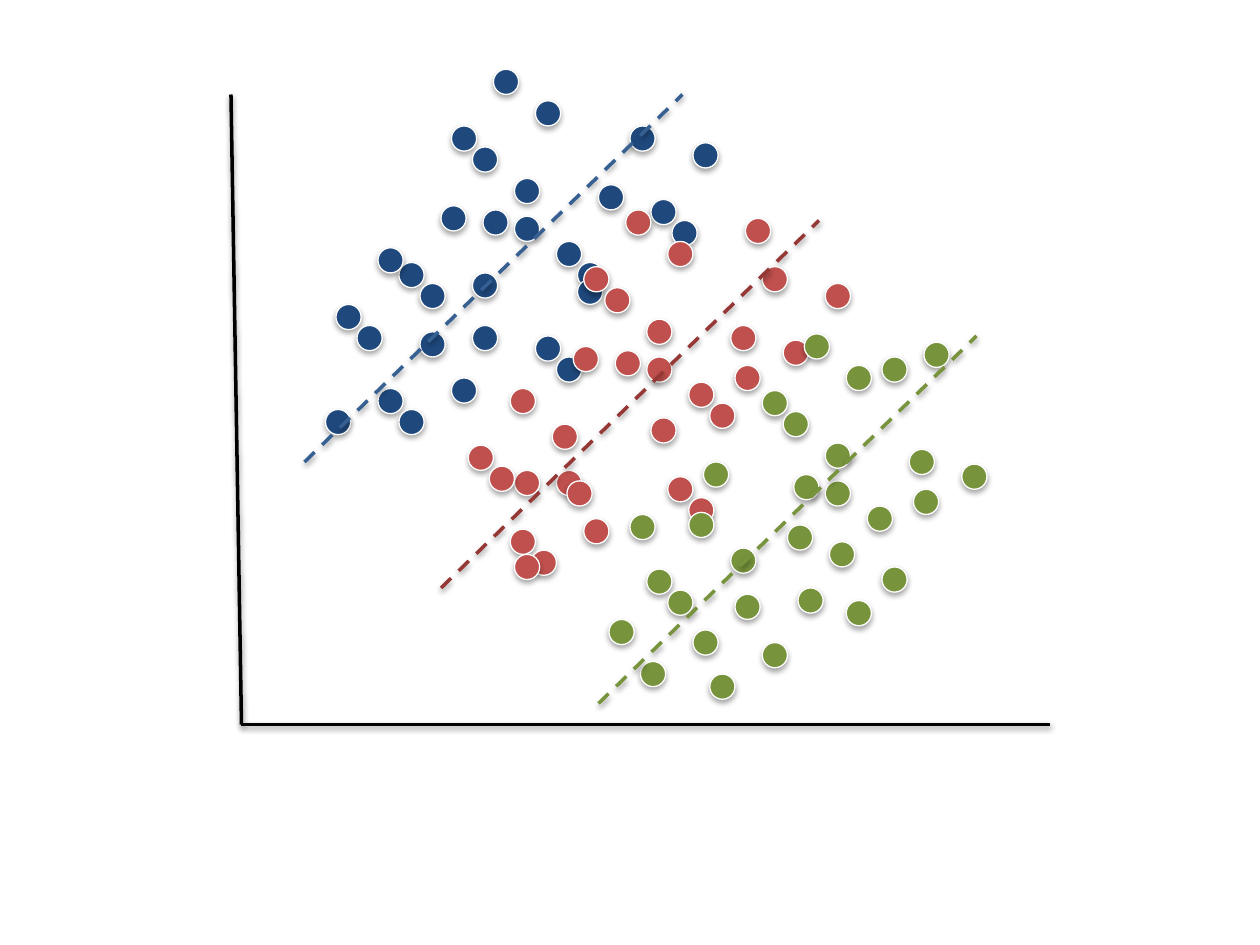
from dataclasses import dataclass

import lxml.etree
import pptx
import pptx.dml.color
import pptx.enum.dml
import pptx.enum.shapes
import pptx.oxml.ns
import pptx.util

COLUMNS, ROWS = 600, 450
SLIDE_WIDTH = pptx.util.Inches(10)
SLIDE_HEIGHT = pptx.util.Inches(7.5)

COLOURS = {
    "axis": "000000",
    "outline": "FFFFFF",
    "shadow": "000000",
    "blue": "1F497D",
    "blue trend": "376092",
    "red": "C0504D",
    "red trend": "953735",
    "green": "77933C",
    "green trend": "77933C",
}

Point = tuple[int, int]

DOT_SIZE = 12
AXIS_TOP, ORIGIN, AXIS_RIGHT = (110, 45), (115, 345), (500, 345)
TREND_RUN, TREND_RISE = 180, 175


@dataclass(frozen=True)
class Shadow:
    """Soft shadow straight below; distances in points, opacity in percent."""
    distance: float
    opacity: int
    blur: float = 3.15


@dataclass(frozen=True)
class Cluster:
    """Dots by top left corner, in drawing order, and the low end of their trend."""
    name: str
    trend_start: Point
    dots: list[Point]


LINE_SHADOW = Shadow(distance=1.57, opacity=38)
DOT_SHADOW = Shadow(distance=1.81, opacity=35)

CLUSTERS = [
    Cluster("blue", (145, 220), [
        (215, 60), (225, 130), (230, 100), (160, 145), (255, 160), (180, 185),
        (265, 115), (215, 180), (190, 125), (310, 95), (225, 70), (225, 155),
        (245, 85), (170, 155), (265, 170), (190, 195), (275, 125), (155, 195),
        (200, 135), (320, 105), (235, 33), (245, 103), (255, 48), (180, 118),
        (275, 133), (200, 158), (285, 88), (300, 60), (210, 98), (330, 68),
    ]),
    Cluster("red", (210, 280), [
        (278, 127), (310, 199), (293, 167), (223, 212), (318, 227), (243, 252),
        (328, 182), (278, 247), (245, 224), (373, 162), (288, 137), (265, 224),
        (308, 152), (233, 222), (328, 237), (253, 262), (338, 192), (245, 264),
        (263, 202), (355, 104), (298, 100), (308, 170), (318, 115), (243, 185),
        (350, 174), (270, 229), (348, 155), (363, 127), (273, 165), (393, 135),
    ]),
    Cluster("green", (285, 335), [
        (363, 186), (395, 258), (378, 226), (308, 271), (403, 286), (305, 315),
        (413, 241), (363, 306), (330, 300), (458, 221), (373, 196), (350, 283),
        (393, 211), (318, 281), (420, 270), (338, 321), (335, 220), (290, 295),
        (348, 261), (440, 163), (383, 159), (393, 229), (403, 174), (328, 244),
        (435, 233), (300, 245), (433, 214), (420, 170), (375, 250), (380, 280),
    ]),
]


def column(number: int) -> int:
    return round(SLIDE_WIDTH * number / COLUMNS)


def row(number: int) -> int:
    return round(SLIDE_HEIGHT * number / ROWS)


def colour(name: str) -> pptx.dml.color.RGBColor:
    return pptx.dml.color.RGBColor.from_string(COLOURS[name])


def add_shadow(shape, shadow: Shadow) -> None:
    tag = pptx.oxml.ns.qn
    properties = shape.element.spPr
    for inherited in properties.findall(tag("a:effectLst")):
        properties.remove(inherited)
    effects = lxml.etree.SubElement(properties, tag("a:effectLst"))
    outer = lxml.etree.SubElement(
        effects, tag("a:outerShdw"),
        blurRad=str(pptx.util.Pt(shadow.blur)),
        dist=str(pptx.util.Pt(shadow.distance)),
        dir="5400000", rotWithShape="0",
    )
    tint = lxml.etree.SubElement(outer, tag("a:srgbClr"), val=COLOURS["shadow"])
    lxml.etree.SubElement(tint, tag("a:alpha"), val=str(shadow.opacity * 1000))


def add_line(shapes, start: Point, end: Point, colour_name: str, dashed: bool = False) -> None:
    line = shapes.add_connector(
        pptx.enum.shapes.MSO_CONNECTOR.STRAIGHT,
        column(start[0]), row(start[1]), column(end[0]), row(end[1]),
    )
    line.line.color.rgb = colour(colour_name)
    line.line.width = pptx.util.Pt(2)
    if dashed:
        line.line.dash_style = pptx.enum.dml.MSO_LINE.DASH
    add_shadow(line, LINE_SHADOW)


def add_dot(shapes, corner: Point, colour_name: str) -> None:
    dot = shapes.add_shape(
        pptx.enum.shapes.MSO_SHAPE.OVAL,
        column(corner[0]), row(corner[1]), column(DOT_SIZE), row(DOT_SIZE),
    )
    dot.fill.solid()
    dot.fill.fore_color.rgb = colour(colour_name)
    dot.line.color.rgb = colour("outline")
    dot.line.width = pptx.util.Pt(0.75)
    add_shadow(dot, DOT_SHADOW)


def main() -> None:
    presentation = pptx.Presentation()
    presentation.slide_width = SLIDE_WIDTH
    presentation.slide_height = SLIDE_HEIGHT
    slide = presentation.slides.add_slide(presentation.slide_layouts[6])

    axes = slide.shapes.add_group_shape()
    for axis_end in (AXIS_TOP, AXIS_RIGHT):
        add_line(axes.shapes, axis_end, ORIGIN, "axis")

    for cluster in CLUSTERS:
        for corner in cluster.dots:
            add_dot(slide.shapes, corner, cluster.name)

    for cluster in CLUSTERS:
        left, bottom = cluster.trend_start
        trend_end = (left + TREND_RUN, bottom - TREND_RISE)
        add_line(slide.shapes, cluster.trend_start, trend_end,
                 f"{cluster.name} trend", dashed=True)

    presentation.save("out.pptx")


if __name__ == "__main__":
    main()
